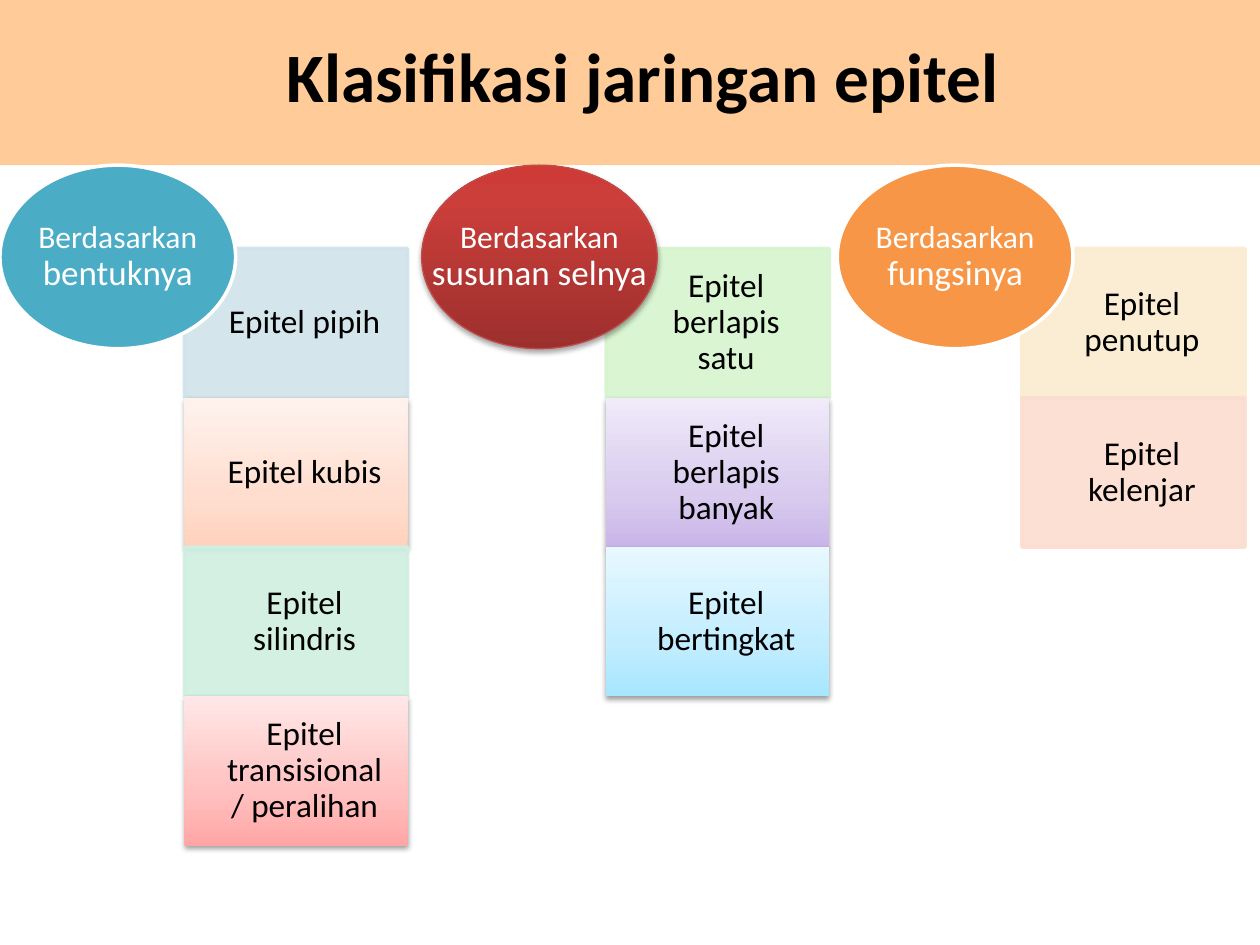
"""Build the slide that classifies epithelial tissue by shape, layering and function."""
import copy

import lxml.etree
import pptx
import pptx.dml.color
import pptx.enum.shapes
import pptx.enum.text
import pptx.oxml.ns
import pptx.util

Cm, Pt, qn = pptx.util.Cm, pptx.util.Pt, pptx.oxml.ns.qn
SHAPE = pptx.enum.shapes.MSO_SHAPE


def paint(fill, colours, middle=35, opacity=100):
    """Fill with one hex colour, or with three running from bottom to top."""
    if len(colours) == 1:
        fill.solid()
        targets = [fill.fore_color]
    else:
        fill.gradient()
        fill.gradient_angle = 90
        stop_list = fill._xPr.find(qn("a:gradFill")).find(qn("a:gsLst"))
        stop_list.append(copy.deepcopy(stop_list[-1]))
        targets = []
        for stop, position in zip(fill.gradient_stops, (0, middle, 100)):
            stop.position = position / 100
            targets.append(stop.color)
    for target, colour in zip(targets, colours):
        target.rgb = pptx.dml.color.RGBColor.from_string(colour)
    if opacity < 100:
        tint = fill._xPr.find(qn("a:solidFill"))[0]
        lxml.etree.SubElement(tint, qn("a:alpha")).set("val", str(opacity * 1000))


def write(shape, runs, colour, frame_format, bold=False):
    """Write (text, size) runs as one centred paragraph."""
    frame = shape.text_frame
    for name, value in frame_format.items():
        setattr(frame, name, value)
    paragraph = frame.paragraphs[0]
    paragraph.alignment = pptx.enum.text.PP_ALIGN.CENTER
    paragraph.line_spacing = 0.9
    for text, size in runs:
        run = paragraph.add_run()
        run.text = text
        for name, value in {"name": "Calibri", "size": Pt(size), "bold": bold}.items():
            setattr(run.font, name, value)
        paint(run.font.fill, [colour])


common = {
    "word_wrap": True,
    "auto_size": pptx.enum.text.MSO_AUTO_SIZE.NONE,
    "vertical_anchor": pptx.enum.text.MSO_ANCHOR.MIDDLE,
}
title_format = common | {"margin_left": Cm(0.76)}
tile_format = common | {"margin_left": Cm(0.72), "margin_right": Cm(0.38),
                        "margin_top": Cm(0.38), "margin_bottom": Cm(0.38)}
basis_format = common | {"margin_left": 0, "margin_right": 0,
                         "margin_top": 0, "margin_bottom": 0}

groups = [
    (0, "bentuknya", ["4BACC6"], "FFFFFF", 2, [
        ("Epitel pipih", ["D0E3EA"]),
        ("Epitel kubis", ["FFD2BD", "FFDED0", "FFF2ED"]),
        ("Epitel silindris", ["CFEFE1"]),
        ("Epitel transisional / peralihan", ["FFA6A5", "FFC0BF", "FFE7E7"]),
    ]),
    (8.5, "susunan selnya", ["9C2F2D", "CB3E3A", "CE3B37"], "BF4C48", 0.75, [
        ("Epitel berlapis satu", ["D6F4CE"]),
        ("Epitel berlapis banyak", ["C9B5E8", "D8CBEE", "F0EAF9"]),
        ("Epitel bertingkat", ["A7E6FF", "C1EDFF", "E7F8FF"]),
    ]),
    (16.88, "fungsinya", ["F79646"], "FFFFFF", 2, [
        ("Epitel penutup", ["FAECCF"]),
        ("Epitel kelenjar", ["FCDDCF"]),
    ]),
]
tile_top, tile_pitch, tile_offset = 5.01, 3.01, 3.72

deck = pptx.Presentation()
deck.slide_width, deck.slide_height = Cm(25.4), Cm(19.05)
slide = deck.slides.add_slide(deck.slide_layouts[5])
shapes = slide.shapes

banner = shapes.add_shape(SHAPE.RECTANGLE, 0, 0, deck.slide_width, Cm(3.33))
banner.shadow.inherit = False
paint(banner.fill, ["FFCC99"])
banner.line.fill.background()

title = shapes.title
banner._element.addnext(title._element)
place = {"left": Cm(0.74), "top": Cm(0.91), "width": Cm(23.93), "height": Cm(1.4)}
for name, value in place.items():
    setattr(title, name, value)
write(title, [("Klasifikasi jaringan epitel", 39.6)], "000000", title_format, bold=True)

raised = []
for left, basis, basis_colours, outline, outline_width, tiles in groups:
    for row, (tissue, colours) in enumerate(tiles):
        tile = shapes.add_shape(SHAPE.RECTANGLE, Cm(left + tile_offset),
                                Cm(tile_top + row * tile_pitch), Cm(4.5), Cm(tile_pitch))
        tile.shadow.inherit = False
        if len(colours) == 1:
            paint(tile.fill, colours, opacity=90)
            paint(tile.line.fill, colours, opacity=90)
            tile.line.width = Pt(2)
        else:
            paint(tile.fill, colours)
            tile.line.fill.background()
            raised.append((tile, 38, 1.6))
        write(tile, [(tissue, 19)], "000000", tile_format)

    basis_area = Cm(left), Cm(3.33), Cm(4.75), Cm(3.7)
    disc = shapes.add_shape(SHAPE.OVAL, *basis_area)
    disc.shadow.inherit = False
    paint(disc.fill, basis_colours, middle=80)
    paint(disc.line.fill, [outline])
    disc.line.width = Pt(outline_width)
    if len(basis_colours) > 1:
        raised.append((disc, 35, 1.8))
    write(shapes.add_textbox(*basis_area), [("Berdasarkan ", 18), (basis, 20)],
          "FFFFFF", basis_format)

for shape, opacity, distance in raised:
    effects = shape._element.spPr.find(qn("a:effectLst"))
    shadow = lxml.etree.SubElement(effects, qn("a:outerShdw"))
    shadow_format = {"blurRad": Pt(3.1), "dist": Pt(distance), "dir": 5400000,
                     "rotWithShape": 0}
    for name, value in shadow_format.items():
        shadow.set(name, str(int(value)))
    shade = lxml.etree.SubElement(shadow, qn("a:srgbClr"))
    shade.set("val", "000000")
    lxml.etree.SubElement(shade, qn("a:alpha")).set("val", str(opacity * 1000))

deck.save("out.pptx")
